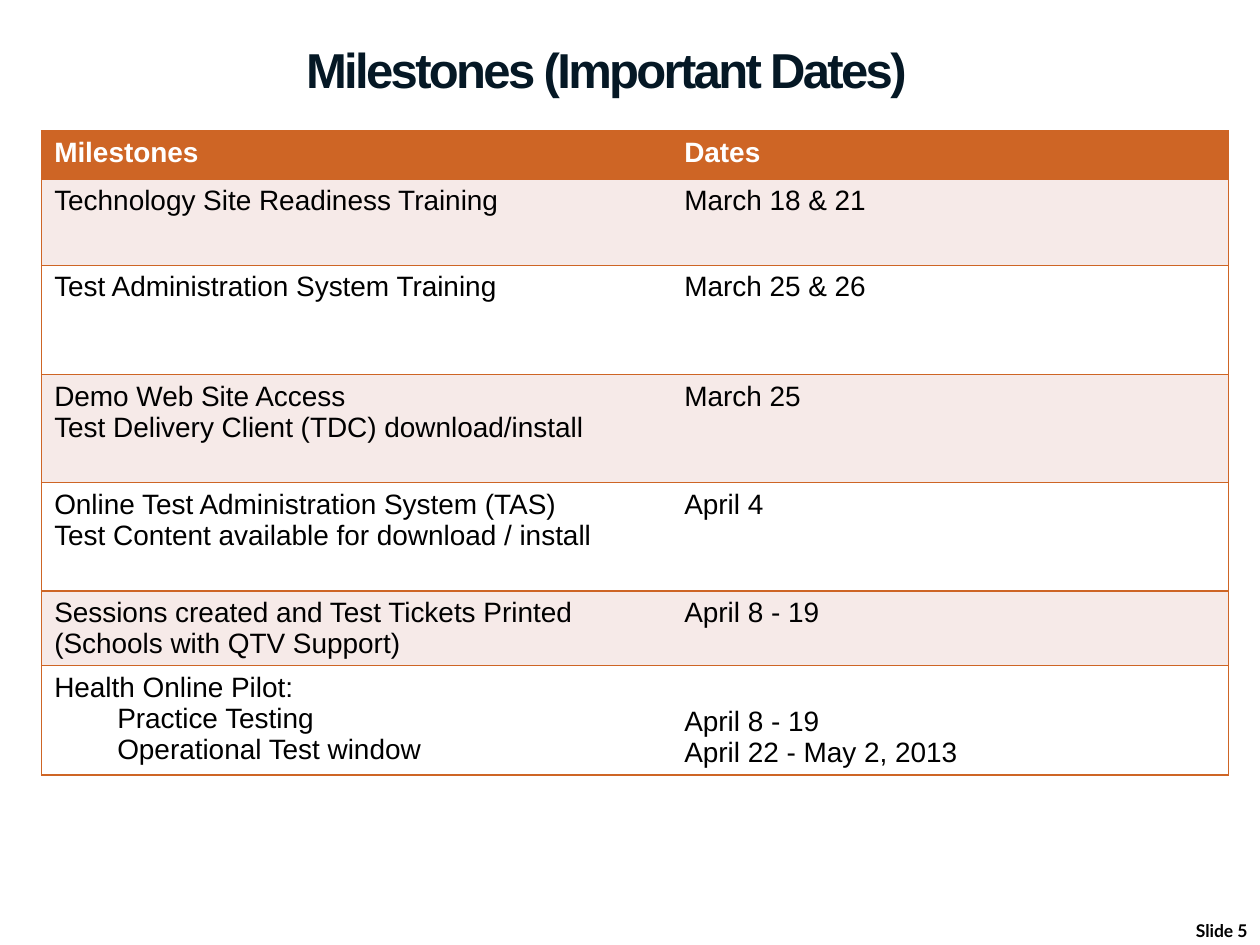
import pptx
import pptx.util
import pptx.dml.color
import pptx.enum.text
import pptx.oxml
import pptx.oxml.ns

Cm, Pt = pptx.util.Cm, pptx.util.Pt
Anchor, Align = pptx.enum.text.MSO_ANCHOR, pptx.enum.text.PP_ALIGN

# Content: milestone lines, date lines, row height in cm
TITLE = "Milestones (Important Dates)"
FOOTER = "Slide 5"
ROWS = [
    (["Milestones"], ["Dates"], 0.97),
    (["Technology Site Readiness Training"], ["March 18 & 21"], 1.74),
    (["Test Administration System Training"], ["March 25 & 26"], 2.2),
    (["Demo Web Site Access", "Test Delivery Client (TDC) download/install"],
     ["March 25"], 2.18),
    (["Online Test Administration System (TAS)",
      "Test Content available for download / install"], ["April 4"], 2.18),
    (["Sessions created and Test Tickets Printed (Schools with QTV Support)"],
     ["April 8 - 19"], 1.5),
    (["Health Online Pilot:", "Practice Testing", "Operational Test window"],
     ["April 8 - 19", "April 22 - May 2, 2013"], 2.2),
]
COLUMN_WIDTHS = [12.7, 5.61, 5.61]
SPLIT_ROWS = {3, 4, 5}      # date columns stay unmerged
INDENTED_ROW = 6            # its later lines are sub-items

COLORS = {"accent": "CE6525", "band": "F6EAE8", "white": "FFFFFF",
          "title": "051825", "text": "000000"}
FORMATS = {
    "header": {"name": "Arial", "size": Pt(16), "bold": True},
    "body": {"name": "Arial", "size": Pt(16), "bold": False},
    "title": {"name": "Arial", "size": Pt(28), "bold": True},
    "footer": {"name": "Lato", "size": Pt(10), "bold": True},
}
NO_STYLE = "{2D5ABB26-0587-4C30-8999-92F81FD0307C}"


def color(name):
    return pptx.dml.color.RGBColor.from_string(COLORS[name])


def write(text_frame, lines, format_name, color_name):
    text_frame.text = "\n".join(lines)
    for paragraph in text_frame.paragraphs:
        for run in paragraph.runs:
            for attribute, value in FORMATS[format_name].items():
                setattr(run.font, attribute, value)
            run.font.color.rgb = color(color_name)


def add_text(slide, box, line, format_name, color_name):
    shape = slide.shapes.add_textbox(*(Cm(length) for length in box))
    shape.text_frame.word_wrap = True
    write(shape.text_frame, [line], format_name, color_name)
    return shape.text_frame


def set_borders(cell, sides):
    properties = cell._tc.get_or_add_tcPr()
    for position, side in enumerate(s for s in "LRTB" if s in sides):
        properties.insert(position, pptx.oxml.parse_xml(
            f'<a:ln{side} {pptx.oxml.ns.nsdecls("a")} w="12700"><a:solidFill>'
            f'<a:srgbClr val="{COLORS["accent"]}"/></a:solidFill></a:ln{side}>'))


def add_milestone_table(slide):
    heights = [height for _, _, height in ROWS]
    table = slide.shapes.add_table(
        len(ROWS), len(COLUMN_WIDTHS), Cm(0.84), Cm(2.64),
        Cm(sum(COLUMN_WIDTHS)), Cm(sum(heights))).table
    table._tbl.tblPr.find(pptx.oxml.ns.qn("a:tableStyleId")).text = NO_STYLE
    table.first_row = table.horz_banding = False
    for column, width in zip(table.columns, COLUMN_WIDTHS):
        column.width = Cm(width)

    for index, (milestones, dates, height) in enumerate(ROWS):
        table.rows[index].height = Cm(height)
        fill = "accent" if index == 0 else ("white", "band")[index % 2]
        format_name = "body" if index else "header"
        text_color = "text" if index else "white"
        merged = index not in SPLIT_ROWS
        if merged:
            table.cell(index, 1).merge(table.cell(index, 2))
        sides = ["LTB", "RTB" if merged else "TB", "RTB"]
        for column, lines in enumerate((milestones, dates, [])):
            cell = table.cell(index, column)
            cell.fill.solid()
            cell.fill.fore_color.rgb = color(fill)
            set_borders(cell, sides[column])
            if lines:
                write(cell.text_frame, lines, format_name, text_color)

    # Sub-items and the dates level with them
    for paragraph in table.cell(INDENTED_ROW, 0).text_frame.paragraphs[1:]:
        paragraph.level = 1
        paragraph._p.get_or_add_pPr().set("marL", str(Cm(1.27)))
    table.cell(INDENTED_ROW, 1).vertical_anchor = Anchor.BOTTOM


def main():
    presentation = pptx.Presentation()
    presentation.slide_width, presentation.slide_height = Cm(25.4), Cm(19.05)
    slide = presentation.slides.add_slide(presentation.slide_layouts[6])

    add_milestone_table(slide)

    # Title with tight letter spacing
    title = add_text(slide, (5.92, 0, 19.48, 2.11), TITLE, "title", "title")
    title.vertical_anchor = Anchor.BOTTOM
    title.paragraphs[0].runs[0]._r.get_or_add_rPr().set("spc", "-150")

    # Slide number
    footer = add_text(slide, (23.5, 18.42, 1.9, 0.63), FOOTER, "footer", "text")
    footer.paragraphs[0].alignment = Align.RIGHT

    presentation.save("out.pptx")


if __name__ == "__main__":
    main()
